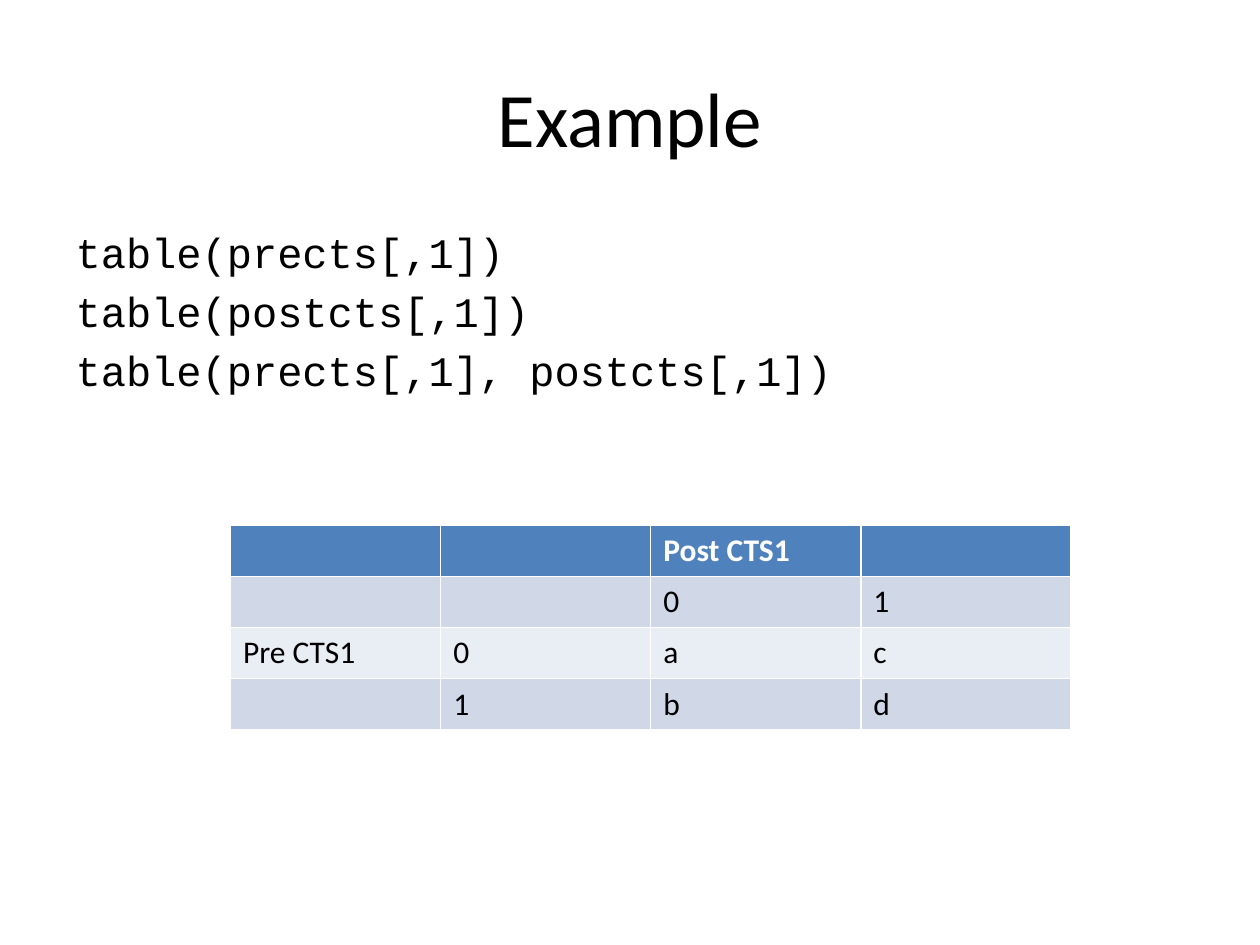
from dataclasses import dataclass

from pptx import Presentation
from pptx.dml.color import RGBColor
from pptx.enum.text import MSO_ANCHOR, PP_ALIGN
from pptx.oxml.ns import qn
from pptx.util import Inches, Pt


@dataclass(frozen=True)
class Theme:
    text: str = "000000"
    header_text: str = "FFFFFF"
    header_fill: str = "4F81BD"
    bands: tuple = ("D0D8E8", "E9EDF4")
    font: str = "Calibri"
    code_font: str = "Courier New"
    title_size: int = 44
    code_size: int = 24
    table_size: int = 18


class SlideBuilder:
    def __init__(self, prs, theme):
        self.theme = theme
        self.s = prs.slides.add_slide(prs.slide_layouts[1])

    def place(self, sp, left, top, width, height):
        box = {"left": left, "top": top, "width": width, "height": height}
        for name, value in box.items():
            setattr(sp, name, Inches(value))

    def add_text(self, p, text, color, **font):
        r = p.add_run()
        r.text = text
        for name, value in font.items():
            setattr(r.font, name, value)
        r.font.color.rgb = RGBColor.from_string(color)

    def title(self, text, *box):
        sp = self.s.shapes.title
        self.place(sp, *box)
        tf = sp.text_frame
        tf.vertical_anchor = MSO_ANCHOR.MIDDLE
        p = tf.paragraphs[0]
        p.alignment = PP_ALIGN.CENTER
        self.add_text(p, text, self.theme.text, name=self.theme.font,
                      size=Pt(self.theme.title_size))

    def code(self, lines, *box):
        sp = self.s.placeholders[1]
        self.place(sp, *box)
        tf = sp.text_frame
        for i, line in enumerate(lines):
            p = tf.add_paragraph() if i else tf.paragraphs[0]
            pPr = p._p.get_or_add_pPr()
            for name in ("marL", "indent"):
                pPr.set(name, "0")
            pPr.append(pPr.makeelement(qn("a:buNone"), {}))
            self.add_text(p, line, self.theme.text, name=self.theme.code_font,
                          size=Pt(self.theme.code_size))

    def table(self, rows, *box):
        theme = self.theme
        table = self.s.shapes.add_table(
            len(rows), len(rows[0]), *map(Inches, box)).table
        for i, row in enumerate(rows):
            header = i == 0
            fill = theme.header_fill if header else theme.bands[(i - 1) % 2]
            color = theme.header_text if header else theme.text
            for j, text in enumerate(row):
                cell = table.cell(i, j)
                cell.fill.solid()
                cell.fill.fore_color.rgb = RGBColor.from_string(fill)
                if text:
                    self.add_text(cell.text_frame.paragraphs[0], text, color,
                                  name=theme.font, size=Pt(theme.table_size),
                                  bold=header)


def main():
    prs = Presentation()
    prs.slide_width, prs.slide_height = Inches(10), Inches(7.5)
    slide = SlideBuilder(prs, Theme())
    slide.title("Example", 0.5, 0.3, 9, 1.25)
    slide.code([
        "table(prects[,1])",
        "table(postcts[,1])",
        "table(prects[,1], postcts[,1])",
    ], 0.5, 1.75, 9, 4.95)
    slide.table([
        ["", "", "Post CTS1", ""],
        ["", "", "0", "1"],
        ["Pre CTS1", "0", "a", "c"],
        ["", "1", "b", "d"],
    ], 1.83, 4.17, 6.67, 1.62)
    prs.save("out.pptx")


if __name__ == "__main__":
    main()
